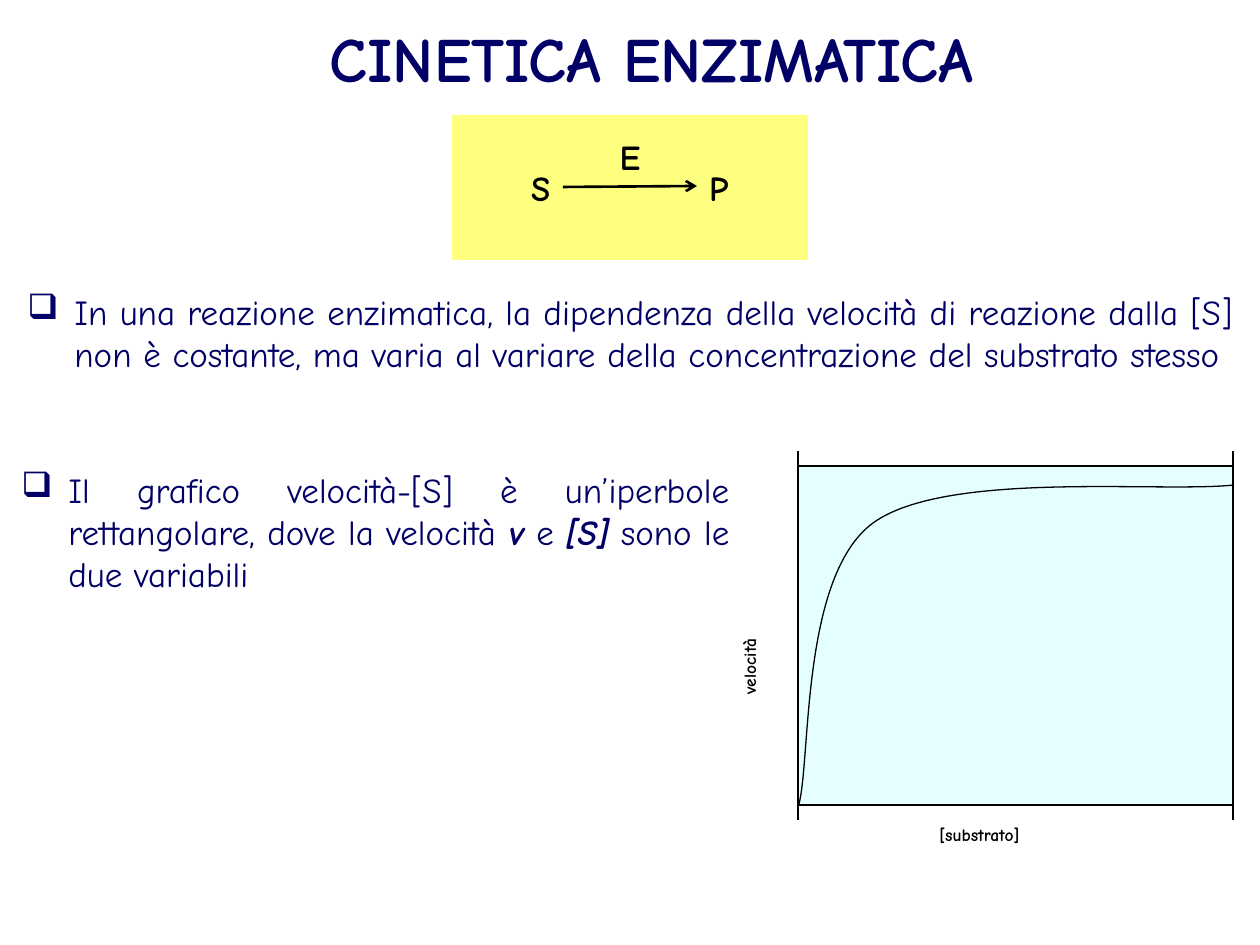
"""Build the enzyme kinetics slide with its reaction scheme and velocity graph."""

from dataclasses import dataclass

from lxml.etree import SubElement
from pptx import Presentation
from pptx.dml.color import RGBColor
from pptx.enum.shapes import MSO_CONNECTOR as Connector, MSO_SHAPE as Preset
from pptx.enum.text import MSO_ANCHOR as Anchor, PP_ALIGN as Align
from pptx.oxml.ns import qn
from pptx.util import Emu, Pt

PX = 914400 / 126
FONT = "Comic Neue"
NAVY = RGBColor(0x00, 0x00, 0x66)
BLACK = RGBColor(0x00, 0x00, 0x00)
YELLOW = RGBColor(0xFF, 0xFF, 0x00)
CYAN = RGBColor(0xCC, 0xFF, 0xFF)


@dataclass(frozen=True)
class Label:
    """Text runs, alternating plain and emphasised, with their frame in px."""
    frame: tuple[int, int, int, int]
    runs: tuple[str, ...]
    size: int
    color: RGBColor = BLACK
    bold: bool = True
    align: Align = Align.LEFT
    anchor: Anchor = Anchor.TOP
    rotation: int = 0
    bullet: str = ""


@dataclass(frozen=True)
class Line:
    """A straight line between two points in px."""
    start: tuple[int, int]
    end: tuple[int, int]
    width: float = 0.75
    arrow: bool = False


GRAPH_LEFT, GRAPH_RIGHT = 798, 1233
GRAPH_TOP, GRAPH_BOTTOM = 466, 805
OVERHANG = 15
CURVE = ((799, 804), (811, 757), (801, 576), (873, 523),
         (946, 470), (1159, 493), (1234, 485))

GRAPH_LINES = [
    *(Line((GRAPH_LEFT, y), (GRAPH_RIGHT, y)) for y in (GRAPH_BOTTOM, GRAPH_TOP)),
    *(Line((x, GRAPH_BOTTOM + OVERHANG), (x, GRAPH_TOP - OVERHANG))
      for x in (GRAPH_RIGHT, GRAPH_LEFT)),
]
GRAPH_LABELS = [
    Label((927, 818, 189, 35), ("[substrato]",), 10),
    Label((687, 626, 126, 35), ("velocità",), 10, rotation=270),
]
STATEMENTS = [
    Label((15, 284, 1231, 84),
          ("In una reazione enzimatica, la dipendenza della velocità di reazione dalla [S] "
           "non è costante, ma varia al variare della concentrazione del substrato stesso",),
          20, NAVY, False, Align.JUSTIFY, bullet="❑"),
    Label((9, 462, 733, 325),
          ("Il grafico velocità-[S] è un’iperbole rettangolare, dove la velocità ",
           "v", " e ", "[S]", " sono le due variabili"),
          20, NAVY, False, Align.JUSTIFY, bullet="❑"),
]
TITLE = Label((116, 31, 1071, 53), ("CINETICA ENZIMATICA",), 36, NAVY,
              align=Align.CENTER, anchor=Anchor.MIDDLE)
ENZYME = Label((580, 129, 100, 55), ("E",), 20, align=Align.CENTER)
REACTION_ARROW = Line((563, 187), (697, 186), 1.5, True)


def px(length: int) -> Emu:
    """Turn px into EMU."""
    return Emu(round(length * PX))


def style(font, size: int, color: RGBColor, bold: bool) -> None:
    """Set the look of a run."""
    font.name, font.size, font.bold = FONT, Pt(size), bold
    font.color.rgb = color


def add_label(shapes, label: Label) -> None:
    """Draw a text box."""
    box = shapes.add_textbox(*map(px, label.frame))
    box.rotation = label.rotation
    frame = box.text_frame
    frame.word_wrap = True
    frame.vertical_anchor = label.anchor
    paragraph = frame.paragraphs[0]
    paragraph.alignment = label.align
    if label.bullet:
        properties = paragraph._p.get_or_add_pPr()
        properties.set("marL", str(px(47)))
        properties.set("indent", str(-px(47)))
        SubElement(properties, qn("a:buChar"), char=label.bullet)
    for index, words in enumerate(label.runs):
        run = paragraph.add_run()
        run.text = words
        emphasised = index % 2 == 1
        style(run.font, label.size, label.color, label.bold or emphasised)
        run.font.italic = emphasised


def add_line(shapes, line: Line) -> None:
    """Draw a straight line, with an arrowhead if wanted."""
    connector = shapes.add_connector(
        Connector.STRAIGHT, *map(px, line.start), *map(px, line.end))
    connector.line.color.rgb = BLACK
    connector.line.width = Pt(line.width)
    if line.arrow:
        SubElement(connector.line._get_or_add_ln(), qn("a:tailEnd"), type="arrow")
    SubElement(connector._element.spPr, qn("a:effectLst"))


def add_panel(shapes, frame: tuple[int, int, int, int], color: RGBColor):
    """Draw a half transparent rectangle without outline."""
    panel = shapes.add_shape(Preset.RECTANGLE, *map(px, frame))
    panel.shadow.inherit = False
    panel.fill.solid()
    panel.fill.fore_color.rgb = color
    SubElement(panel._element.spPr.find(".//" + qn("a:srgbClr")), qn("a:alpha"), val="50000")
    panel.line.fill.background()
    return panel


def add_curve(shapes, points: tuple[tuple[int, int], ...]) -> None:
    """Draw a Bézier curve from a start point and triples of control points."""
    builder = shapes.build_freeform(*points[0], scale=PX)
    builder.add_line_segments(points[1:], close=False)
    curve = builder.convert_to_shape()
    curve.shadow.inherit = False
    curve.fill.background()
    curve.line.color.rgb = BLACK
    curve.line.width = Pt(0.75)
    outline = curve._element.spPr.find(".//" + qn("a:path"))
    segments = outline.findall(qn("a:lnTo"))
    for first in range(0, len(segments), 3):
        bezier = SubElement(outline, qn("a:cubicBezTo"))
        for segment in segments[first:first + 3]:
            bezier.append(segment[0])
            outline.remove(segment)


def add_graph(shapes) -> None:
    """Draw the velocity against substrate graph as one group."""
    graph = shapes.add_group_shape().shapes
    add_panel(graph, (GRAPH_LEFT, GRAPH_TOP, GRAPH_RIGHT - GRAPH_LEFT,
                      GRAPH_BOTTOM - GRAPH_TOP), CYAN)
    add_curve(graph, CURVE)
    for line in GRAPH_LINES:
        add_line(graph, line)
    for label in GRAPH_LABELS:
        add_label(graph, label)


def add_reaction(shapes) -> None:
    """Draw the scheme of substrate, enzyme and product."""
    panel = add_panel(shapes, (452, 115, 356, 145), YELLOW)
    frame = panel.text_frame
    frame.vertical_anchor = Anchor.TOP
    frame.margin_left, frame.margin_top = px(79), px(52)
    paragraph = frame.paragraphs[0]
    paragraph.text = "S\tP"
    paragraph.alignment = Align.LEFT
    stops = SubElement(paragraph._p.get_or_add_pPr(), qn("a:tabLst"))
    SubElement(stops, qn("a:tab"), pos=str(px(178)), algn="l")
    for run in paragraph.runs:
        style(run.font, 20, BLACK, True)
    add_line(shapes, REACTION_ARROW)
    add_label(shapes, ENZYME)


def main() -> None:
    """Build and save the slide."""
    deck = Presentation()
    deck.slide_width, deck.slide_height = px(1260), px(945)
    shapes = deck.slides.add_slide(deck.slide_layouts[6]).shapes
    for statement in STATEMENTS:
        add_label(shapes, statement)
    add_graph(shapes)
    add_label(shapes, TITLE)
    add_reaction(shapes)
    deck.save("out.pptx")


if __name__ == "__main__":
    main()
